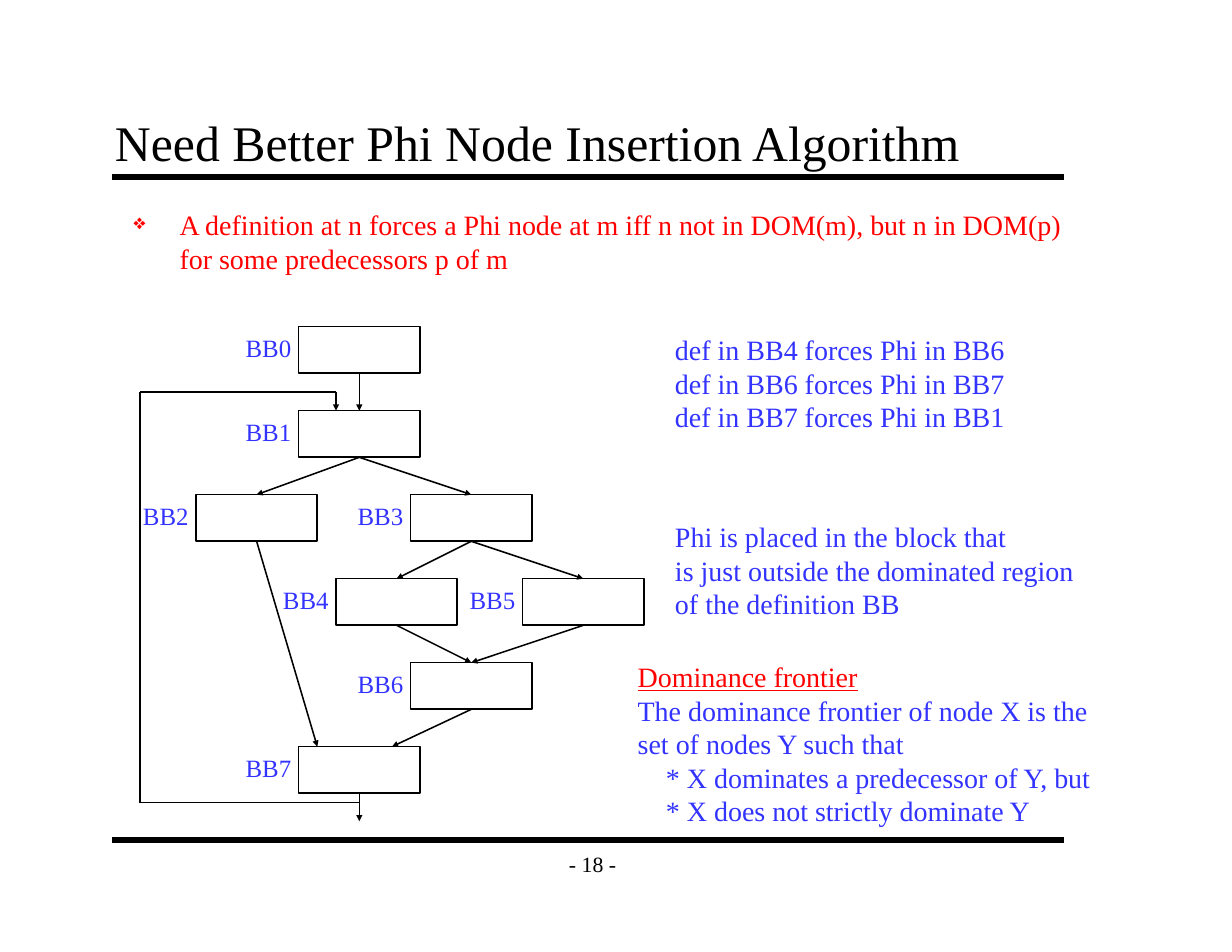
from lxml import etree
from pptx import Presentation
from pptx.dml.color import RGBColor
from pptx.enum.shapes import MSO_CONNECTOR, MSO_SHAPE
from pptx.enum.text import MSO_ANCHOR, MSO_AUTO_SIZE, PP_ALIGN
from pptx.oxml.ns import qn
from pptx.util import Cm, Pt

STRAIGHT, RECTANGLE = MSO_CONNECTOR.STRAIGHT, MSO_SHAPE.RECTANGLE
TOP, MIDDLE, BOTTOM = MSO_ANCHOR.TOP, MSO_ANCHOR.MIDDLE, MSO_ANCHOR.BOTTOM
LEFT, CENTER = PP_ALIGN.LEFT, PP_ALIGN.CENTER
FIXED = MSO_AUTO_SIZE.NONE
BLACK = RGBColor(0x00, 0x00, 0x00)
RED = RGBColor(0xFF, 0x00, 0x00)
BLUE = RGBColor(0x33, 0x33, 0xFF)
FONT = "Times New Roman"
TOP_SIDE, BOTTOM_SIDE = 0, 2

# Content; positions are in grid steps, twelve to the inch
STEP_CM = 2.54 / 12
TITLE = "Need Better Phi Node Insertion Algorithm"
RULE = ("A definition at n forces a Phi node at m iff n not in DOM(m), "
        "but n in DOM(p) for some predecessors p of m")
PAGE_NUMBER = "- 18 -"
FORCED_PHIS = ["def in BB4 forces Phi in BB6",
               "def in BB6 forces Phi in BB7",
               "def in BB7 forces Phi in BB1"]
PLACEMENT = ["Phi is placed in the block that",
             "is just outside the dominated region",
             "of the definition BB"]
FRONTIER_HEADING = "Dominance frontier"
FRONTIER = ["The dominance frontier of node X is the",
            "set of nodes Y such that"]
FRONTIER_CONDITIONS = ["* X dominates a predecessor of Y, but",
                       "* X does not strictly dominate Y"]

# Basic blocks: name -> (left, row)
BLOCKS = {"BB0": (32, 0), "BB1": (32, 1), "BB2": (21, 2), "BB3": (44, 2),
          "BB4": (36, 3), "BB5": (56, 3), "BB6": (44, 4), "BB7": (32, 5)}
EDGES = [("BB0", "BB1"), ("BB1", "BB2"), ("BB1", "BB3"), ("BB3", "BB4"),
         ("BB3", "BB5"), ("BB4", "BB6"), ("BB5", "BB6")]
EDGES_INTO_BB7 = [("BB6", 42), ("BB2", 34)]  # source, x of the arrowhead
FIRST_ROW, ROW_PITCH = 35, 9
BLOCK_WIDTH, BLOCK_HEIGHT = 13, 5
LABEL_OFFSET, LABEL_WIDTH, LABEL_HEIGHT = 7, 8, 4.4
LOOP = [(38.5, 86), (15, 86), (15, 42), (36, 42), (36, 44)]
EXIT_END = (38.5, 88)


def steps(count):
    return Cm(count * STEP_CM)


def add_text(slide, paragraphs, left, top, width, height, *, size=18,
             color=BLUE, anchor=TOP, align=LEFT):
    """Each paragraph is a string or a (string, format dict) pair."""
    box = slide.shapes.add_textbox(*map(steps, (left, top, width, height)))
    frame = box.text_frame
    frame.word_wrap = True
    frame.auto_size = FIXED
    frame.vertical_anchor = anchor
    frame.margin_left = frame.margin_right = Cm(0.28)
    frame.margin_top = frame.margin_bottom = Cm(0.14)
    for index, item in enumerate(paragraphs):
        text, style = (item, {}) if isinstance(item, str) else item
        paragraph = frame.paragraphs[0] if index == 0 else frame.add_paragraph()
        paragraph.alignment = align
        run = paragraph.add_run()
        run.text = text
        run.font.name = FONT
        run.font.size = Pt(size)
        run.font.color.rgb = style.get("color", color)
        run.font.underline = style.get("underline", False)
        if "indent" in style:
            paragraph._p.get_or_add_pPr().set("marL", str(style["indent"]))
    return box


def add_bullet(paragraph, mark, indent):
    properties = paragraph._p.get_or_add_pPr()
    properties.set("marL", str(indent))
    properties.set("indent", str(-indent))
    color = etree.SubElement(properties, qn("a:buClr"))
    etree.SubElement(color, qn("a:srgbClr"), val=str(RED))
    etree.SubElement(properties, qn("a:buSzPct"), val="75000")
    etree.SubElement(properties, qn("a:buChar"), char=mark)


def add_line(slide, start, end, weight=1, arrow=False):
    line = slide.shapes.add_connector(STRAIGHT, *map(steps, (*start, *end)))
    line.line.color.rgb = BLACK
    line.line.width = Pt(weight)
    if arrow:
        etree.SubElement(line.line._get_or_add_ln(), qn("a:tailEnd"),
                         type="triangle", w="sm", len="sm")
    etree.SubElement(line._element.spPr, qn("a:effectLst"))
    return line


def add_block(slide, left, top):
    block = slide.shapes.add_shape(
        RECTANGLE, *map(steps, (left, top, BLOCK_WIDTH, BLOCK_HEIGHT)))
    block.fill.background()
    block.line.color.rgb = BLACK
    block.line.width = Pt(1)
    block.shadow.inherit = False
    return block


def row_top(row):
    return FIRST_ROW + row * ROW_PITCH


def main():
    deck = Presentation()
    deck.slide_width, deck.slide_height = Cm(27.94), Cm(21.59)
    slide = deck.slides.add_slide(deck.slide_layouts[6])

    # Frame: rules, page number, title
    for y in (19, 90):
        add_line(slide, (12, y), (114, y), weight=4)
    add_text(slide, [PAGE_NUMBER], 59, 90, 9, 5, size=14, color=BLACK,
             anchor=MIDDLE, align=CENTER)
    add_text(slide, [TITLE], 11, 11, 112, 8, size=32, color=BLACK,
             anchor=BOTTOM)
    rule = add_text(slide, [RULE], 13, 21.6, 103, 68.4, color=RED)
    add_bullet(rule.text_frame.paragraphs[0], "❖", Cm(1.04))

    # Flow graph: blocks with their labels
    blocks = {}
    for name, (left, row) in BLOCKS.items():
        blocks[name] = add_block(slide, left, row_top(row))
        add_text(slide, [name], left - LABEL_OFFSET, row_top(row),
                 LABEL_WIDTH, LABEL_HEIGHT, size=16)

    def bottom_middle(name):
        left, row = BLOCKS[name]
        return left + BLOCK_WIDTH / 2, row_top(row) + BLOCK_HEIGHT

    def add_edge(source, end):
        edge = add_line(slide, bottom_middle(source), end, arrow=True)
        edge.begin_connect(blocks[source], BOTTOM_SIDE)
        return edge

    # Flow graph: edges, exit and the loop back to BB1
    for source, target in EDGES:
        left, row = BLOCKS[target]
        edge = add_edge(source, (left + BLOCK_WIDTH / 2, row_top(row)))
        edge.end_connect(blocks[target], TOP_SIDE)
    for source, x in EDGES_INTO_BB7:
        add_edge(source, (x, row_top(BLOCKS["BB7"][1])))
    add_edge("BB7", EXIT_END)
    for start, end in zip(LOOP, LOOP[1:]):
        add_line(slide, start, end, arrow=end == LOOP[-1])

    # Explanations on the right
    add_text(slide, FORCED_PHIS, 71, 35, 39, 12)
    add_text(slide, PLACEMENT, 71, 55, 46, 12)
    heading = (FRONTIER_HEADING, {"color": RED, "underline": True})
    conditions = [(text, {"indent": Cm(0.64)}) for text in FRONTIER_CONDITIONS]
    add_text(slide, [heading, *FRONTIER, *conditions], 67, 70, 52, 19.2)

    deck.save("out.pptx")


if __name__ == "__main__":
    main()
